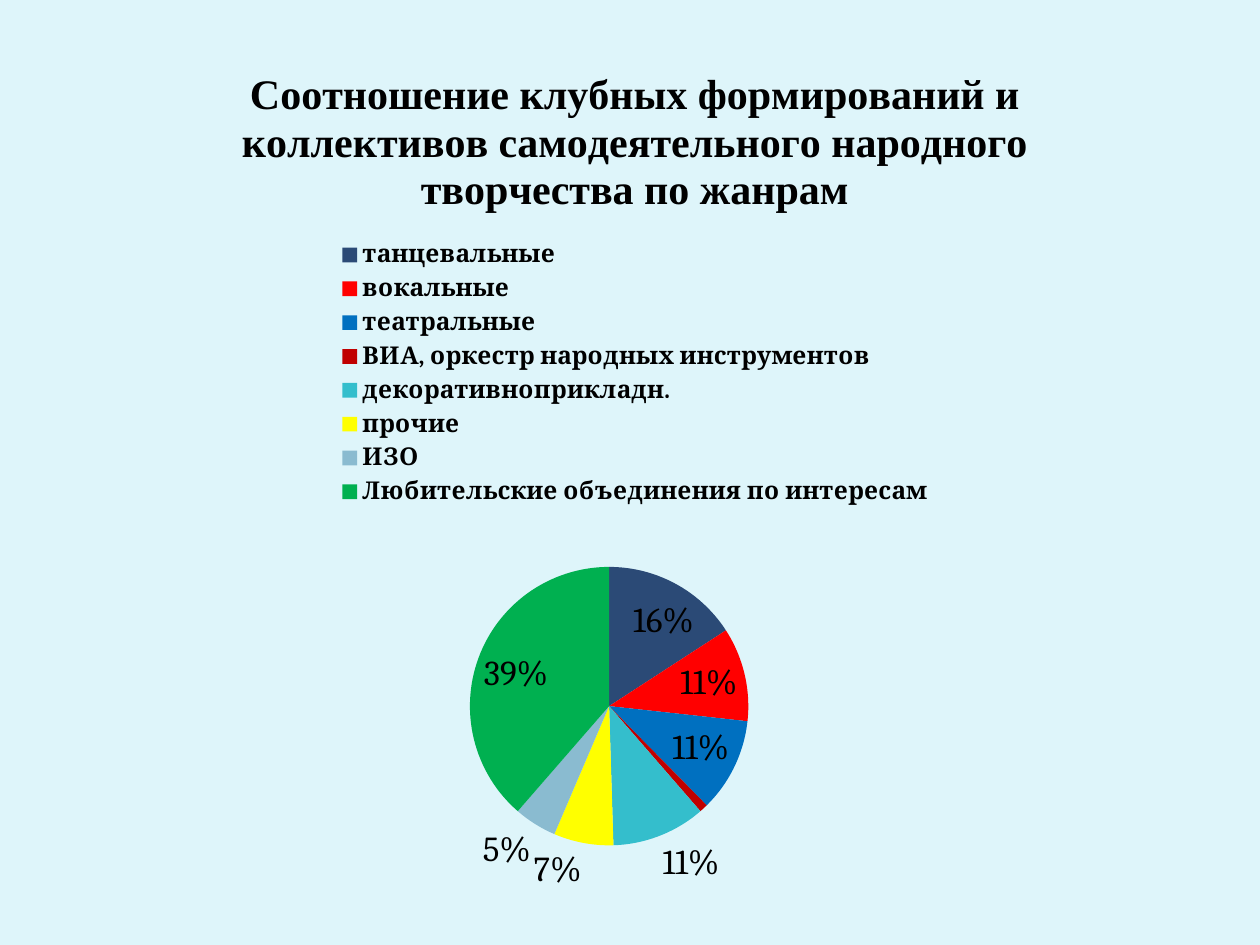
from dataclasses import dataclass
from typing import Any

from lxml.etree import SubElement
from pptx import Presentation
from pptx.chart.data import CategoryChartData
from pptx.dml.color import RGBColor
from pptx.enum.chart import XL_CHART_TYPE as ChartType
from pptx.enum.chart import XL_LABEL_POSITION as LabelPos
from pptx.enum.chart import XL_LEGEND_POSITION as LegendPos
from pptx.oxml.ns import qn
from pptx.util import Inches, Pt

COLORS = {
    "background": "DEF5FA", "text": "000000", "navy": "2B4A76", "red": "FF0000",
    "blue": "0070C0", "crimson": "C00000", "teal": "34BECC", "yellow": "FFFF00",
    "mist": "8ABBD0", "green": "00B050",
}
TITLE = ("Соотношение клубных формирований и коллективов "
         "самодеятельного народного творчества по жанрам")
CHART_W, CHART_H = Inches(9.37), Inches(6.93)
FONTS = {
    "chart": {"name": "Cambria", "size": Pt(10)},
    "title": {"name": "Times New Roman", "size": Pt(24), "bold": True},
    "legend": {"name": "Cambria", "size": Pt(14), "bold": True},
    "label": {"name": "Cambria", "size": Pt(20), "bold": False},
}


@dataclass(frozen=True)
class Genre:
    name: str
    value: int
    color: str
    position: Any = LabelPos.BEST_FIT
    labelled: bool = True


GENRES = [
    Genre("танцевальные", 16, "navy"),
    Genre("вокальные", 11, "red"),
    Genre("театральные", 11, "blue"),
    Genre("ВИА, оркестр народных инструментов", 1, "crimson", labelled=False),
    Genre("декоративноприкладн.", 11, "teal", LabelPos.OUTSIDE_END),
    Genre("прочие", 7, "yellow", LabelPos.OUTSIDE_END),
    Genre("ИЗО", 5, "mist", LabelPos.OUTSIDE_END),
    Genre("Любительские объединения по интересам", 39, "green"),
]


def rgb(name: str) -> RGBColor:
    return RGBColor.from_string(COLORS[name])


def style(font: Any, role: str) -> None:
    for key, value in FONTS[role].items():
        setattr(font, key, value)
    font.color.rgb = rgb("text")


def place(parent: Any, index: int, **box: float) -> None:
    for old in parent.findall(qn("c:layout")):
        parent.remove(old)
    layout = SubElement(parent, qn("c:layout"))
    manual = SubElement(layout, qn("c:manualLayout"))
    if parent.tag == qn("c:plotArea"):
        SubElement(manual, qn("c:layoutTarget")).set("val", "inner")
    for axis in "xy":
        SubElement(manual, qn(f"c:{axis}Mode")).set("val", "edge")
    for key, value in box.items():
        share = Inches(value) / (CHART_W if key in "xw" else CHART_H)
        SubElement(manual, qn(f"c:{key}")).set("val", f"{share:.4f}")
    parent.insert(index, layout)


def paint_slices(chart: Any) -> None:
    series = chart.plots[0].series[0]
    labels = series.data_labels
    options = {"show_value": False, "show_percentage": True,
               "number_format": "0%", "number_format_is_linked": False}
    for key, value in options.items():
        setattr(labels, key, value)
    style(labels.font, "label")
    for i, genre in enumerate(GENRES):
        point = series.points[i]
        point.format.fill.solid()
        point.format.fill.fore_color.rgb = rgb(genre.color)
        point.data_label.position = genre.position
        style(point.data_label.font, "label")
    for genre, label in zip(GENRES, chart.element.xpath(".//c:dLbl")):
        label.find(qn("c:showVal")).set("val", "0")
        label.find(qn("c:showPercent")).set("val", str(int(genre.labelled)))


def add_genre_chart(s: Any) -> None:
    data = CategoryChartData()
    data.categories = [g.name for g in GENRES]
    data.add_series("Series 1", [g.value for g in GENRES])
    chart = s.shapes.add_chart(ChartType.PIE, Inches(0.35), Inches(0.29),
                               CHART_W, CHART_H, data).chart
    style(chart.font, "chart")
    chart.plots[0].vary_by_categories = True
    chart.has_title = True
    p = chart.chart_title.text_frame.paragraphs[0]
    r = p.add_run()
    r.text = TITLE
    style(r.font, "title")
    chart.has_legend = True
    chart.legend.position = LegendPos.TOP
    chart.legend.include_in_layout = False
    style(chart.legend.font, "legend")
    paint_slices(chart)
    root = chart.element.find(qn("c:chart"))
    place(root.find(qn("c:title")), 1, x=1.51, y=0.18)
    place(root.find(qn("c:legend")), 1, x=2.3, y=1.58, w=4.78, h=2.19)
    place(root.find(qn("c:plotArea")), 0, x=3.38, y=4.21, w=2.21, h=2.21)


def main() -> None:
    """Build the slide with the pie chart of club genres."""
    prs = Presentation()
    prs.slide_width, prs.slide_height = Inches(10), Inches(7.5)
    s = prs.slides.add_slide(prs.slide_layouts[6])
    s.background.fill.solid()
    s.background.fill.fore_color.rgb = rgb("background")
    add_genre_chart(s)
    prs.save("out.pptx")


if __name__ == "__main__":
    main()
